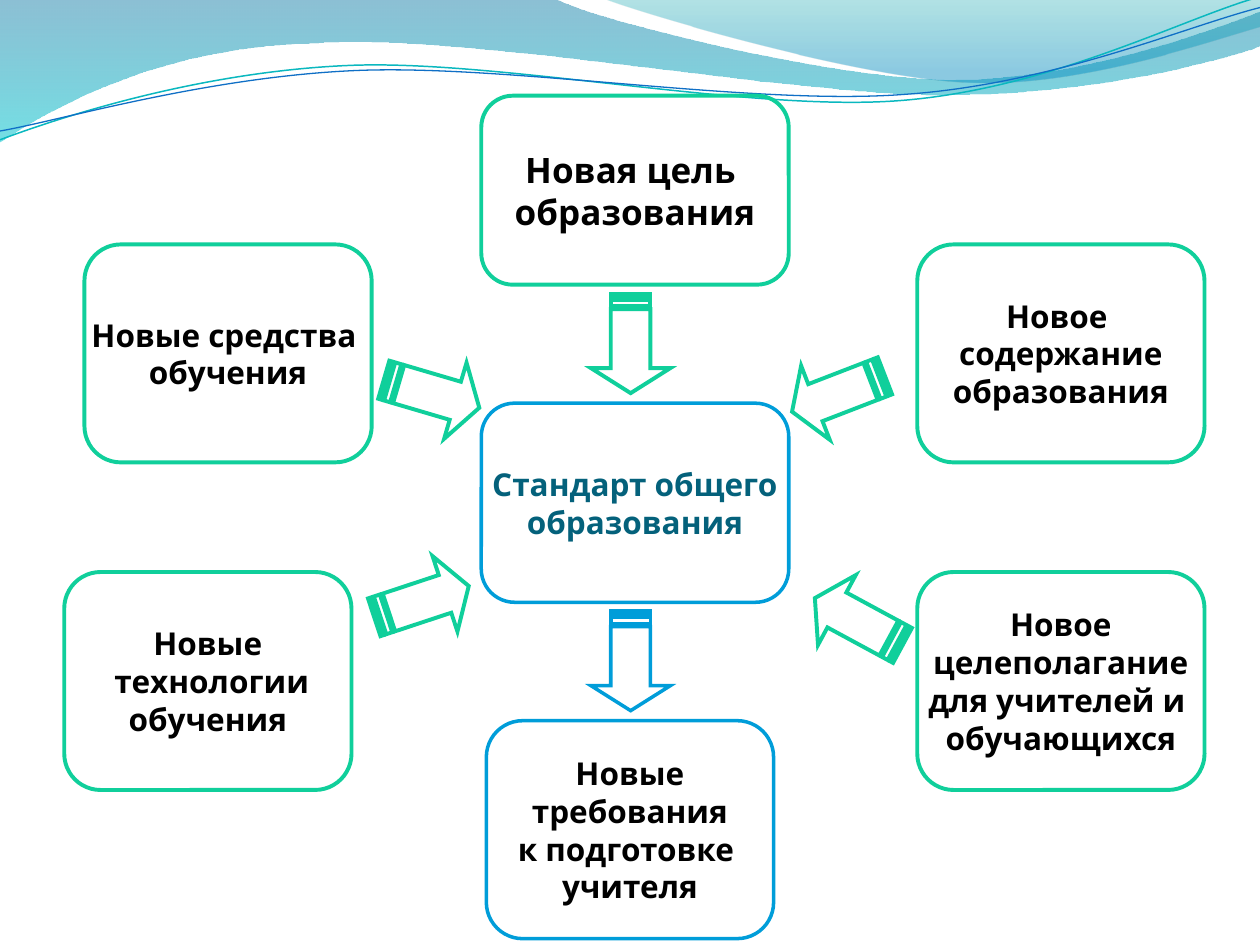
from lxml import etree
from pptx import Presentation
from pptx import util as u
from pptx.dml.color import RGBColor
from pptx.enum import shapes, text
from pptx.oxml.ns import qn

COLORS = {
    "green": "10CF9B", "blue": "009DD9", "white": "FFFFFF",
    "black": "000000", "title": "04617B",
    "deep": "0074A1", "aqua": "00C6CF", "teal": "00A1A9", "azure": "008BBF",
    "wave_teal": "0AB8BF", "wave_blue": "0F6FC6",
}
UNITS = 1000  # outline units per inch


def rgb(name):
    return RGBColor.from_string(COLORS[name])


class Deck:
    FONT = "Karla"
    ARROW_W, ARROW_H = 0.79, 0.63

    def __init__(self, width, height):
        self.prs = Presentation()
        self.prs.slide_width, self.prs.slide_height = u.Inches(width), u.Inches(height)
        self.s = self.prs.slides.add_slide(self.prs.slide_layouts[6])

    def outline(self, sp, color, width, filled=False):
        sp.shadow.inherit = False
        if filled:
            sp.fill.solid()
            sp.fill.fore_color.rgb = rgb("white")
        else:
            sp.fill.background()
        sp.line.color.rgb = rgb(color)
        sp.line.width = u.Pt(width)

    def freeform(self, contours, closed=True, left=0, top=0):
        scaled = [[(x * UNITS, y * UNITS) for x, y in pts] for pts in contours]
        fb = self.s.shapes.build_freeform(*scaled[0][0], scale=u.Inches(1) / UNITS)
        for i, pts in enumerate(scaled):
            if i:
                fb.move_to(*pts[0])
            fb.add_line_segments(pts[1:], close=closed)
        return fb.convert_to_shape(u.Inches(left), u.Inches(top))

    def curve(self, start, steps, closed):
        """Steps are (x, y) lines or (x1, y1, x2, y2, x, y) Bezier curves."""
        points = [start] + [step[i:i + 2] for step in steps for i in range(0, len(step), 2)]
        sp = self.freeform([points], closed)
        segments = iter(list(sp._element.spPr.iter(qn("a:lnTo"))))
        for step in steps:
            segment = next(segments)
            if len(step) == 6:
                segment.tag = qn("a:cubicBezTo")
                for control in (next(segments), next(segments)):
                    segment.append(control[0])
                    control.getparent().remove(control)
        return sp

    def wave_band(self, start, steps, stops):
        sp = self.curve(start, steps, closed=True)
        sp.shadow.inherit = False
        sp.line.fill.background()
        sp.fill.gradient()
        sp.fill.gradient_angle = 270
        for stop, (pos, color, _) in zip(sp.fill.gradient_stops, stops):
            stop.position = pos
            stop.color.rgb = rgb(color)
        # opacity of each gradient stop
        for clr, (_, _, opacity) in zip(sp._element.spPr.iter(qn("a:srgbClr")), stops):
            etree.SubElement(clr, qn("a:alpha")).set("val", str(opacity * 1000))

    def wave_line(self, start, steps, color, width):
        self.outline(self.curve(start, steps, closed=False), color, width)

    def box(self, left, top, width, height, lines, color="green", size=18, ink="black"):
        sp = self.s.shapes.add_shape(
            shapes.MSO_SHAPE.ROUNDED_RECTANGLE,
            u.Inches(left), u.Inches(top), u.Inches(width), u.Inches(height))
        self.outline(sp, color, 2.25 if color == "green" else 2, color == "blue")
        tf = sp.text_frame
        tf.word_wrap = False
        tf.vertical_anchor = text.MSO_ANCHOR.MIDDLE
        for i, line in enumerate(lines):
            p = tf.add_paragraph() if i else tf.paragraphs[0]
            p.text = line
            p.alignment = text.PP_ALIGN.CENTER
            p.font.name, p.font.size, p.font.bold = self.FONT, u.Pt(size), True
            p.font.color.rgb = rgb(ink)

    def arrow(self, left, top, angle, color="green"):
        """Right-pointing arrow with two stripes at its tail, then turned."""
        w, h = self.ARROW_W, self.ARROW_H
        head, hi, lo = w * 3 / 4, h / 4, h * 3 / 4

        def bar(a, b):
            return [(a * w / 32, hi), (b * w / 32, hi), (b * w / 32, lo), (a * w / 32, lo)]

        tail = w * 5 / 32
        body = [(head, 0), (head, hi), (tail, hi), (tail, lo), (head, lo), (head, h), (w, h / 2)]
        sp = self.freeform([body, bar(2, 4), bar(0, 1)], left=left, top=top)
        self.outline(sp, color, 2.25 if color == "green" else 2, color == "blue")
        sp.rotation = angle
        # sharp corners
        line = sp._element.spPr.find(qn("a:ln"))
        etree.SubElement(line, qn("a:miter")).set("lim", "800000")


def main():
    deck = Deck(10, 7.5)

    # Waves along the top
    deck.wave_band(
        (0, 0),
        [(4.4, -0.01), (4.76, 0.17, 6.64, 0.63, 7.58, 0.63), (8.53, 0.63, 9.58, 0.26, 10, 0.09),
         (10.01, 0.36), (9.83, 0.44, 8.7, 0.76, 7.46, 0.75), (6.22, 0.75, 3.82, 0.28, 2.57, 0.34),
         (1.29, 0.36, 0.46, 0.83, -0.01, 1.13)],
        [(0, "deep", 45), (1, "aqua", 55)])
    deck.wave_band(
        (4.79, -0.01),
        [(5.09, 0.11, 6.82, 0.62, 7.69, 0.65), (8.56, 0.69, 9.61, 0.32, 10, 0.21), (10, 0)],
        [(0, "teal", 30), (0.8, "azure", 45)])
    deck.wave_line(
        (0, 1.11),
        [(0.48, 0.93, 1.58, 0.57, 2.77, 0.52), (3.95, 0.47, 5.93, 0.89, 7.13, 0.8),
         (8.33, 0.71, 9.38, 0.15, 9.98, -0.02)], "wave_teal", 0.85)
    deck.wave_line(
        (0, 1.04),
        [(0.47, 0.96, 1.64, 0.61, 2.83, 0.56), (4.03, 0.51, 5.97, 0.84, 7.17, 0.75),
         (8.36, 0.67, 9.41, 0.21, 10, 0.06)], "wave_blue", 0.75)

    # Centre and goal
    deck.box(3.82, 3.2, 2.44, 1.58, ["Стандарт общего", "образования"], "blue", ink="title")
    deck.box(3.82, 0.76, 2.44, 1.5, ["Новая цель ", "образования"], size=20)

    # Surrounding boxes, all of one size
    for left, top, color, lines in [
        (0.67, 1.94, "green", ["Новые средства ", "обучения"]),
        (7.28, 1.94, "green", ["Новое ", "содержание", "образования"]),
        (0.51, 4.54, "green", ["Новые", " технологии", "обучения"]),
        (7.28, 4.54, "green", ["Новое", "целеполагание", "для учителей и ", "обучающихся"]),
        (3.86, 5.72, "blue", ["Новые", " требования ", "к подготовке ", "учителя"]),
    ]:
        deck.box(left, top, 2.28, 1.73, lines, color)

    # Arrows into the centre, and one down to the requirements
    for left, top, angle in [(4.61, 2.41, 90), (3.03, 2.81, 16.4), (6.26, 2.81, 158.9),
                             (2.95, 4.46, 341.7), (6.42, 4.62, 208.4)]:
        deck.arrow(left, top, angle)
    deck.arrow(4.61, 4.93, 90, "blue")

    deck.prs.save("out.pptx")


if __name__ == "__main__":
    main()
